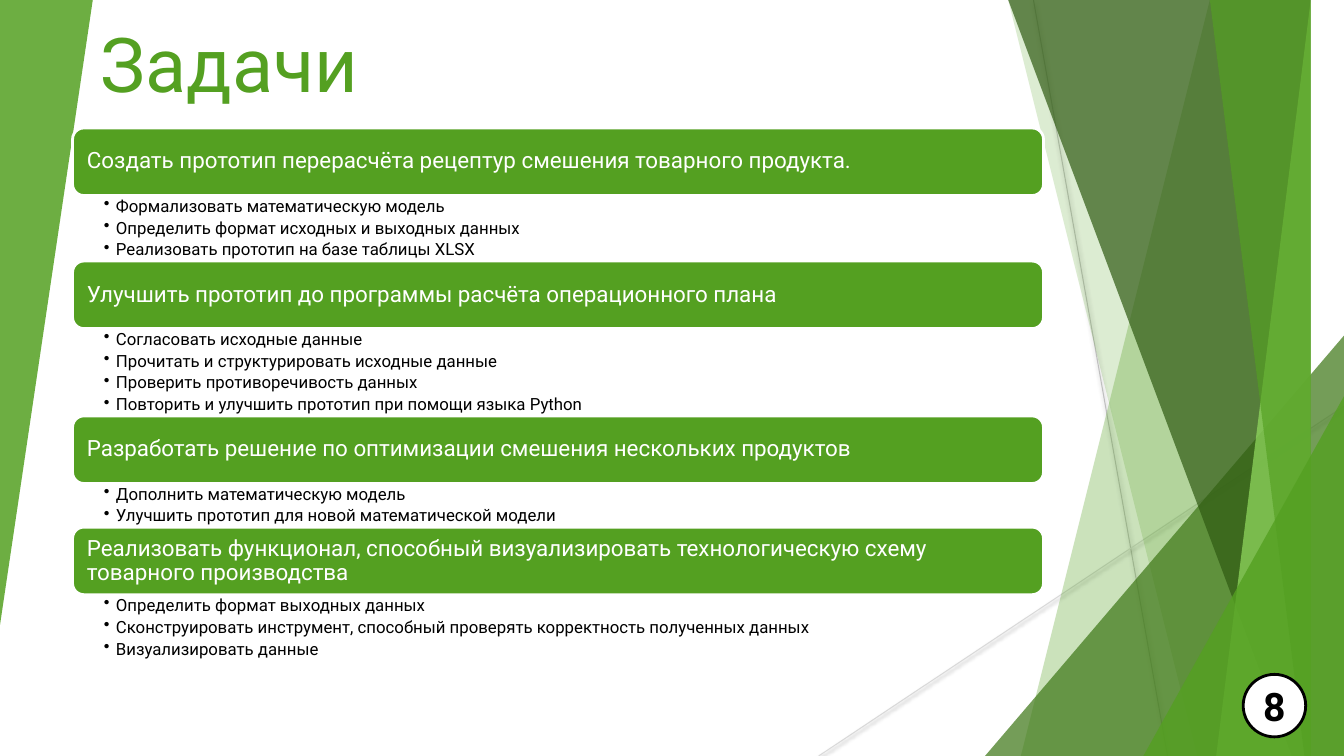
from lxml import etree
from pptx import Presentation
from pptx.dml.color import RGBColor
from pptx.enum.shapes import MSO_CONNECTOR, MSO_SHAPE
from pptx.enum.text import MSO_ANCHOR, PP_ALIGN
from pptx.oxml.ns import qn
from pptx.util import Inches, Pt

TRIANGLE, ROUNDED, OVAL = MSO_SHAPE.ISOSCELES_TRIANGLE, MSO_SHAPE.ROUNDED_RECTANGLE, MSO_SHAPE.OVAL
STRAIGHT = MSO_CONNECTOR.STRAIGHT
TOP, MIDDLE, BOTTOM = MSO_ANCHOR.TOP, MSO_ANCHOR.MIDDLE, MSO_ANCHOR.BOTTOM
LEFT, CENTER = PP_ALIGN.LEFT, PP_ALIGN.CENTER
W, H = 13.33, 7.5
GREEN, WHITE, BLACK = "54A021", "FFFFFF", "000000"
HEADER_H, BULLET_H = 0.67, 0.65 / 3

TASKS = [
    ("Создать прототип перерасчёта рецептур смешения товарного продукта.",
     ["Формализовать математическую модель",
      "Определить формат исходных и выходных данных",
      "Реализовать прототип на базе таблицы XLSX"]),
    ("Улучшить прототип до программы расчёта операционного плана",
     ["Согласовать исходные данные",
      "Прочитать и структурировать исходные данные",
      "Проверить противоречивость данных",
      "Повторить и улучшить прототип при помощи языка Python"]),
    ("Разработать решение по оптимизации смешения нескольких продуктов",
     ["Дополнить математическую модель",
      "Улучшить прототип для новой математической модели"]),
    ("Реализовать функционал, способный визуализировать технологическую схему товарного производства",
     ["Определить формат выходных данных",
      "Сконструировать инструмент, способный проверять корректность полученных данных",
      "Визуализировать данные"]),
]


def rgb(value):
    """Turn a hex string into a colour."""
    return RGBColor.from_string(value)


def paint(sp, fill, alpha=100, line=None, width=2):
    """Set fill with opacity in percent, outline and no shadow."""
    sp.shadow.inherit = False
    sp.fill.solid()
    sp.fill.fore_color.rgb = rgb(fill)
    if alpha < 100:
        color = sp.fill._xPr.find(qn("a:solidFill"))[0]
        etree.SubElement(color, qn("a:alpha"), val=str(alpha * 1000))
    if line:
        sp.line.color.rgb = rgb(line)
        sp.line.width = Pt(width)
    else:
        sp.line.fill.background()


def add_shape(s, kind, box, fill, adj=None, **style):
    """Add a painted preset shape in a box given in inches."""
    sp = s.shapes.add_shape(kind, *map(Inches, box))
    if adj is not None:
        sp.adjustments[0] = adj
    paint(sp, fill, **style)
    return sp


def add_box(s, box):
    """Add an empty text box in a box given in inches."""
    return s.shapes.add_textbox(*map(Inches, box))


def write(sp, text, size, color=BLACK, bold=False, align=LEFT, anchor=TOP,
          margins=(0.1, 0.05, 0.1, 0.05), spacing=1.0, after=0, bullet=False):
    """Write text, one paragraph per line, into a shape."""
    tf = sp.text_frame
    tf.word_wrap = True
    tf.vertical_anchor = anchor
    tf.margin_left, tf.margin_top, tf.margin_right, tf.margin_bottom = map(Inches, margins)
    for i, line in enumerate(text.split("\n")):
        p = tf.add_paragraph() if i else tf.paragraphs[0]
        p.alignment = align
        p.line_spacing = spacing
        p.space_after = Pt(after)
        if bullet:
            pPr = p._p.get_or_add_pPr()
            pPr.set("marL", str(Inches(0.12)))
            pPr.set("indent", str(-Inches(0.12)))
            etree.SubElement(pPr, qn("a:buChar"), char="•")
        r = p.add_run()
        r.text = line
        r.font.name = "Roboto"
        r.font.size = Pt(size)
        r.font.bold = bold
        r.font.color.rgb = rgb(color)


def add_line(s, start, end, color):
    """Add a thin line with a soft shadow below it."""
    line = s.shapes.add_connector(STRAIGHT, *map(Inches, start + end))
    line.line.color.rgb = rgb(color)
    line.line.width = Pt(0.75)
    effects = etree.SubElement(line._element.spPr, qn("a:effectLst"))
    shadow = etree.SubElement(effects, qn("a:outerShdw"), blurRad=str(Pt(3.1)),
                              dist=str(Pt(1.6)), dir="5400000", rotWithShape="0")
    black = etree.SubElement(shadow, qn("a:srgbClr"), val=BLACK)
    etree.SubElement(black, qn("a:alpha"), val="38000")


def add_band(s, top_x, bottom_x, fill, alpha):
    """Add a full-height band from a slanted left edge to the right slide edge."""
    builder = s.shapes.build_freeform(top_x, 0, scale=Inches(1))
    builder.add_line_segments([(W, 0), (W, H), (bottom_x, H)], close=True)
    paint(builder.convert_to_shape(), fill, alpha)


def add_corner(s, box, fill, alpha):
    """Add a right-angled triangle with its upright side on the right."""
    return add_shape(s, TRIANGLE, box, fill, adj=1, alpha=alpha)


def add_backdrop(s):
    """Draw the overlapping green facets on both sides."""
    add_line(s, (10.25, 0), (11.58, H), "BFBFBF")
    add_line(s, (W, 4.03), (8.12, H), "D9D9D9")
    add_band(s, 12.28, 10.04, GREEN, 30)
    add_band(s, 10.5, 11.83, GREEN, 20)
    add_corner(s, (9.77, 3.33, 3.56, 4.17), "3F7818", 72)
    add_band(s, 10.21, 12.91, "2F5A12", 70)
    add_band(s, 13.03, 11.92, "94DE61", 70)
    add_band(s, 11.96, 13.18, GREEN, 65)
    add_corner(s, (11.34, 3.93, 1.99, 3.57), GREEN, 80)
    add_corner(s, (0, 0, 0.92, 6.2), GREEN, 85).rotation = 180


def add_page_number(s, box, number):
    """Draw the circled page number."""
    sp = add_shape(s, OVAL, box, WHITE, line=BLACK)
    write(sp, number, 28, bold=True, align=CENTER, anchor=MIDDLE, margins=(0, 0, 0, 0))


def add_tasks(s, left, top, width):
    """Stack each task header above its bulleted steps."""
    for header, steps in TASKS:
        sp = add_shape(s, ROUNDED, (left, top, width, HEADER_H), GREEN, line=WHITE)
        write(sp, header, 16, WHITE, anchor=MIDDLE, margins=(0.11, 0.07, 0.11, 0.07), spacing=0.9)
        top += HEADER_H
        height = BULLET_H * len(steps)
        write(add_box(s, (left, top, width, height)), "\n".join(steps), 12,
              margins=(0.31, 0.02, 0.12, 0.02), spacing=0.9, after=2.7, bullet=True)
        top += height


def main():
    """Build the slide and save it."""
    prs = Presentation()
    prs.slide_width, prs.slide_height = Inches(W), Inches(H)
    s = prs.slides.add_slide(prs.slide_layouts[6])
    add_backdrop(s)
    add_page_number(s, (12.33, 6.69, 0.62, 0.62), "8")
    write(add_box(s, (0.9, 0.12, 3.08, 1)), "Задачи", 54, GREEN, anchor=BOTTOM)
    add_tasks(s, 0.72, 1.27, 9.63)
    prs.save("out.pptx")


if __name__ == "__main__":
    main()
